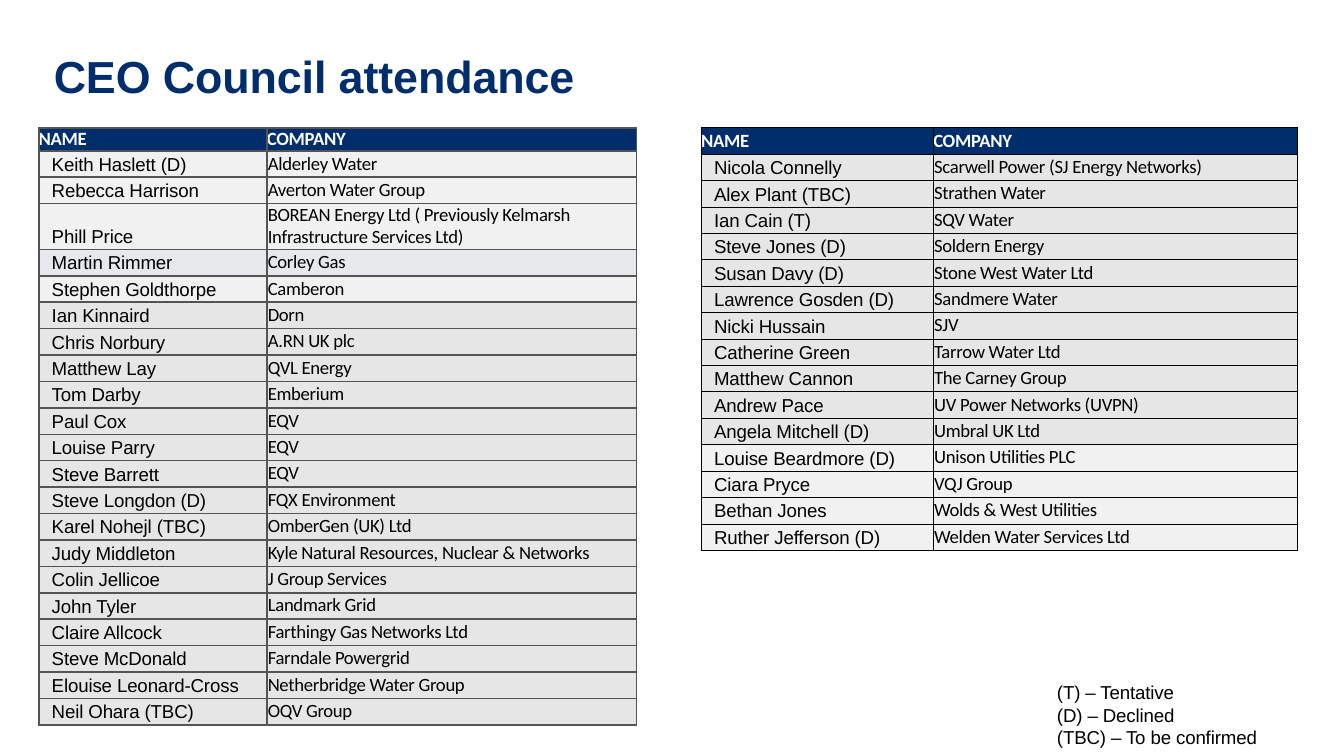
from lxml.etree import SubElement
from pptx import Presentation
from pptx.dml.color import RGBColor
from pptx.enum.text import MSO_ANCHOR as Anchor, MSO_AUTO_SIZE as AutoSize, PP_ALIGN as Align
from pptx.oxml.ns import qn
from pptx.util import Pt

NAVY = RGBColor(0x00, 0x2E, 0x6C)
WHITE = RGBColor(0xFF, 0xFF, 0xFF)
BLACK = RGBColor(0x00, 0x00, 0x00)
SLATE = RGBColor(0x52, 0x55, 0x53)
GREY = RGBColor(0xE7, 0xE6, 0xE6)
LIGHT = RGBColor(0xF1, 0xF1, 0xF1)
BLUISH = RGBColor(0xE7, 0xE8, 0xEB)

HEADER = ("NAME", "COMPANY")
ROW_HEIGHT = 14.15
TABLE_TOP = 68.5

FIRST_HALF = [
    ("Keith Haslett (D)", "Alderley Water"),
    ("Rebecca Harrison", "Averton Water Group"),
    ("Phill Price", "BOREAN Energy Ltd ( Previously Kelmarsh Infrastructure Services Ltd)"),
    ("Martin Rimmer", "Corley Gas"),
    ("Stephen Goldthorpe", "Camberon"),
    ("Ian Kinnaird", "Dorn"),
    ("Chris Norbury", "A.RN UK plc"),
    ("Matthew Lay", "QVL Energy"),
    ("Tom Darby", "Emberium"),
    ("Paul Cox", "EQV"),
    ("Louise Parry", "EQV"),
    ("Steve Barrett", "EQV"),
    ("Steve Longdon (D)", "FQX Environment"),
    ("Karel Nohejl (TBC)", "OmberGen (UK) Ltd"),
    ("Judy Middleton", "Kyle Natural Resources, Nuclear & Networks"),
    ("Colin Jellicoe", "J Group Services"),
    ("John Tyler", "Landmark Grid"),
    ("Claire Allcock", "Farthingy Gas Networks Ltd"),
    ("Steve McDonald", "Farndale Powergrid"),
    ("Elouise Leonard-Cross", "Netherbridge Water Group"),
    ("Neil Ohara (TBC)", "OQV Group"),
]
SECOND_HALF = [
    ("Nicola Connelly", "Scarwell Power (SJ Energy Networks)"),
    ("Alex Plant (TBC)", "Strathen Water"),
    ("Ian Cain (T)", "SQV Water"),
    ("Steve Jones (D)", "Soldern Energy"),
    ("Susan Davy (D)", "Stone West Water Ltd"),
    ("Lawrence Gosden (D)", "Sandmere Water"),
    ("Nicki Hussain", "SJV"),
    ("Catherine Green", "Tarrow Water Ltd"),
    ("Matthew Cannon", "The Carney Group"),
    ("Andrew Pace", "UV Power Networks (UVPN)"),
    ("Angela Mitchell (D)", "Umbral UK Ltd"),
    ("Louise Beardmore (D)", "Unison Utilities PLC"),
    ("Ciara Pryce", "VQJ Group"),
    ("Bethan Jones", "Wolds & West Utilities"),
    ("Ruther Jefferson (D)", "Welden Water Services Ltd"),
]
TABLES = [
    {"left": 20.75, "columns": (122.25, 198), "people": FIRST_HALF,
     "heights": {0: 12.3, 3: 24.6}, "border": SLATE, "weight": 1,
     "fills": {0: NAVY, 1: LIGHT, 2: LIGHT, 3: LIGHT, 4: BLUISH, 5: LIGHT}},
    {"left": 375.6, "columns": (124.4, 195), "people": SECOND_HALF,
     "heights": {}, "border": BLACK, "weight": 0.5,
     "fills": {0: NAVY, 12: LIGHT, 13: LIGHT, 14: LIGHT, 15: LIGHT}},
]


def style_run(span, font, size, color, bold=False, spacing=-5):
    span.font.name = font
    span.font.size = Pt(size)
    span.font.bold = bold
    span.font.color.rgb = color
    span.font._element.set("spc", str(spacing))


def border_cell(cell, color, weight):
    properties = cell._tc.get_or_add_tcPr()
    for position, side in enumerate(("a:lnL", "a:lnR", "a:lnT", "a:lnB")):
        line = SubElement(properties, qn(side), w=str(Pt(weight)))
        fill = SubElement(line, qn("a:solidFill"))
        SubElement(fill, qn("a:srgbClr"), val=str(color))
        properties.insert(position, line)


deck = Presentation()
deck.slide_width, deck.slide_height = Pt(720), Pt(405)
page = deck.slides.add_slide(deck.slide_layouts[5])

title = page.shapes.title
title.left, title.top, title.width, title.height = Pt(28.8), Pt(24), Pt(284), Pt(31)
frame = title.text_frame
frame.text = "CEO Council attendance"
frame.auto_size = AutoSize.NONE
frame.vertical_anchor = Anchor.BOTTOM
frame.margin_left = frame.margin_right = frame.margin_top = frame.margin_bottom = 0
frame.paragraphs[0].alignment = Align.LEFT
style_run(frame.paragraphs[0].runs[0], "Arial", 24, NAVY, True)

for settings in TABLES:
    rows = [HEADER] + settings["people"]
    heights = [settings["heights"].get(index, ROW_HEIGHT) for index in range(len(rows))]
    columns = settings["columns"]
    table = page.shapes.add_table(len(rows), 2, Pt(settings["left"]), Pt(TABLE_TOP),
                                  Pt(sum(columns)), Pt(sum(heights))).table
    for column, width in zip(table.columns, columns):
        column.width = Pt(width)
    for row_index, row in enumerate(rows):
        table.rows[row_index].height = Pt(heights[row_index])
        is_header = row_index == 0
        for column_index, text in enumerate(row):
            is_name = column_index == 0 and not is_header
            cell = table.cell(row_index, column_index)
            cell.margin_left = Pt(7 if is_name else 0.5 * (not is_header))
            cell.margin_right = cell.margin_top = 0
            cell.margin_bottom = Pt(1.1 if is_name else 0)
            cell.vertical_anchor = Anchor.BOTTOM if is_name else Anchor.MIDDLE
            cell.fill.solid()
            cell.fill.fore_color.rgb = settings["fills"].get(row_index, GREY)
            border_cell(cell, settings["border"], settings["weight"])
            para = cell.text_frame.paragraphs[0]
            para.text = text
            para.line_spacing = Pt(11.2 if is_name else 11.8)
            style_run(para.runs[0], "Arial" if is_name else "Calibri", 10,
                      WHITE if is_header else BLACK, is_header, -5 if is_name else -15)

legend = page.shapes.add_textbox(Pt(565.5), Pt(365), Pt(112), Pt(38))
frame = legend.text_frame
frame.word_wrap = True
frame.margin_left = Pt(0.75)
frame.margin_right = frame.margin_top = frame.margin_bottom = 0
frame.text = "(T) – Tentative\n(D) – Declined\n(TBC) – To be confirmed"
for para in frame.paragraphs:
    para.line_spacing = Pt(12)
    style_run(para.runs[0], "Arial", 10, BLACK)

deck.save("out.pptx")
